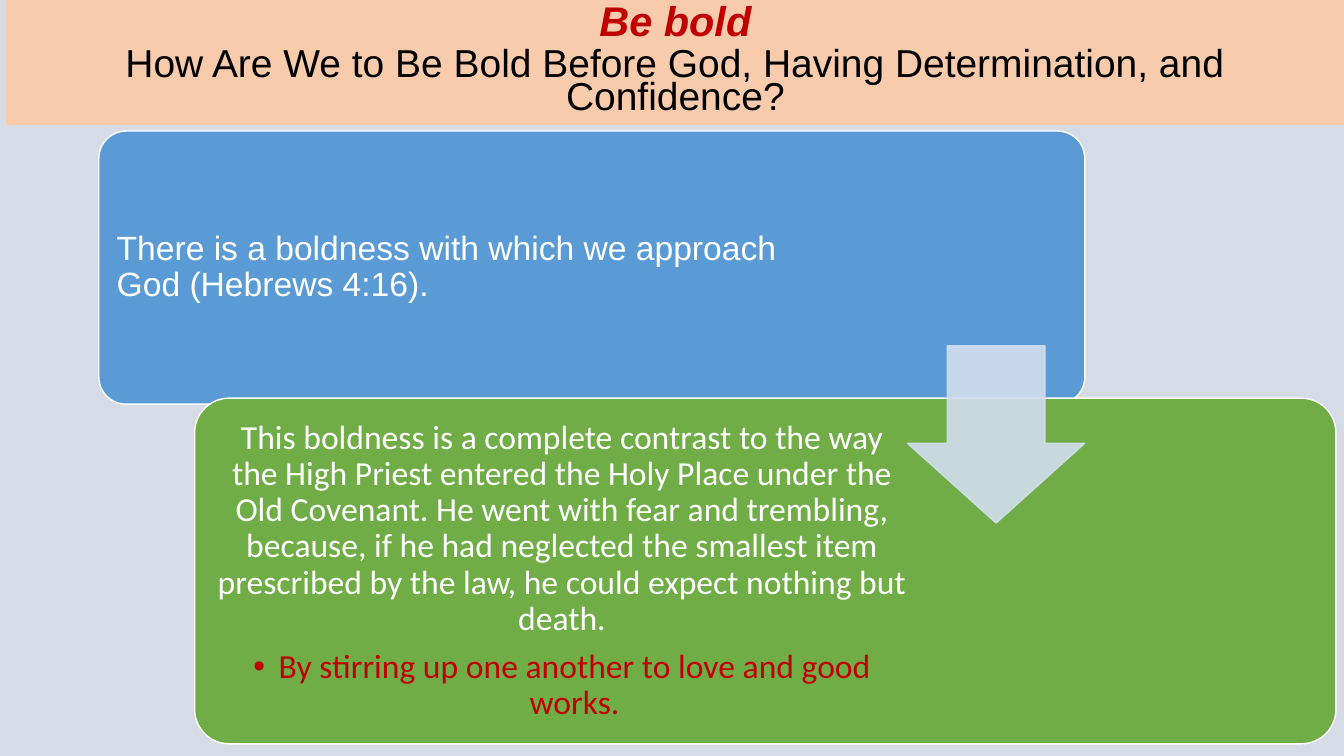
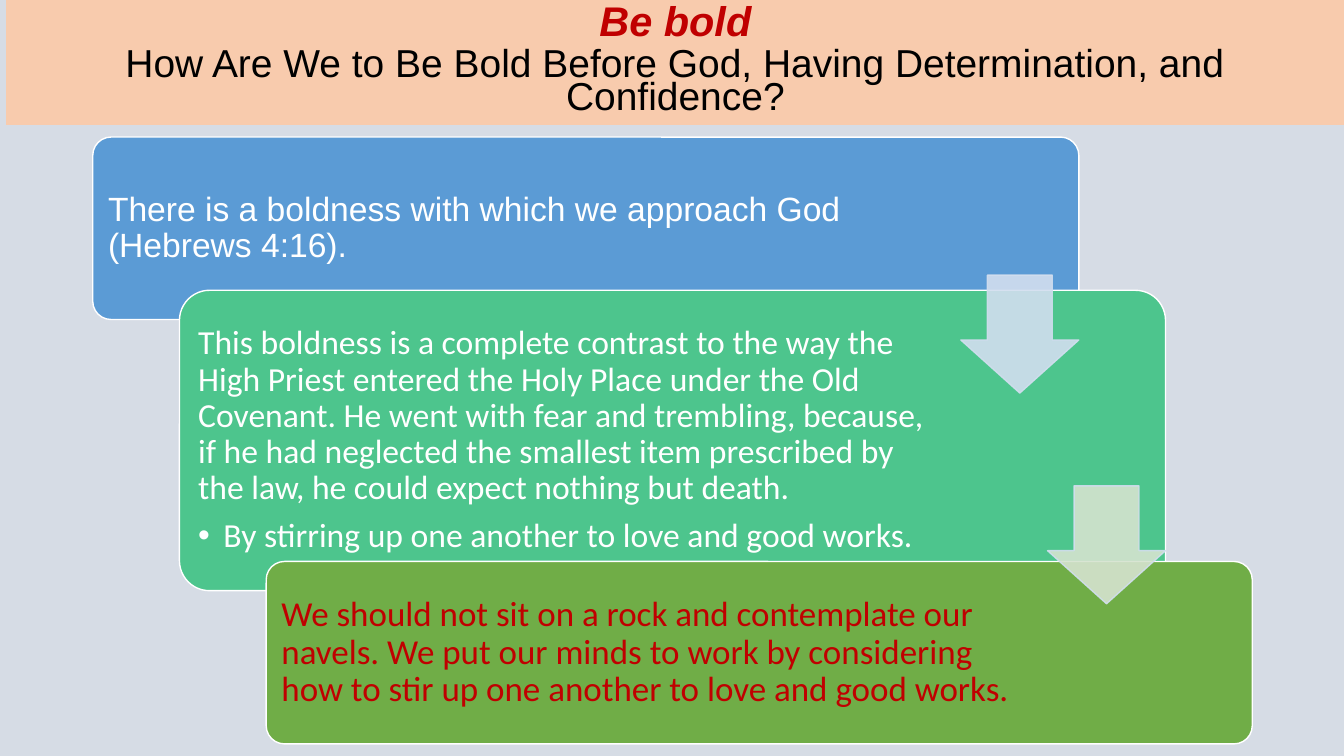
"""Build two slides of stepped cards on boldness before God."""
from dataclasses import dataclass

from lxml.etree import SubElement
from pptx import Presentation
from pptx.dml.color import RGBColor
from pptx.enum.shapes import MSO_SHAPE
from pptx.enum.text import MSO_ANCHOR, MSO_AUTO_SIZE, PP_ALIGN
from pptx.oxml.ns import qn
from pptx.util import Inches, Pt


@dataclass(frozen=True)
class Theme:
    """Colours, fonts and type sizes of the deck."""
    back: str = "D6DCE5"
    band: str = "F8CBAD"
    blue: str = "5B9BD5"
    mint: str = "4DC58D"
    green: str = "70AD47"
    ice: str = "D2DEEF"
    sage: str = "D5E3CF"
    red: str = "C00000"
    black: str = "000000"
    white: str = "FFFFFF"
    sans: str = "Arial"
    body: str = "Calibri"
    head: float = 29.6
    sub: float = 27.8
    text: float = 24
    large: float = 25


@dataclass(frozen=True)
class Line:
    """One paragraph of a card."""
    text: str
    font: str
    size: float
    tint: str
    dot: bool = False


THEME = Theme()
OPEN = Line("There is a boldness with which we approach God (Hebrews 4:16).",
            THEME.sans, THEME.text, THEME.white)
PRIEST = Line("This boldness is a complete contrast to the way the High Priest "
              "entered the Holy Place under the Old Covenant. He went with fear "
              "and trembling, because, if he had neglected the smallest item "
              "prescribed by the law, he could expect nothing but death.",
              THEME.body, THEME.text, THEME.white)
STIR = "By stirring up one another to love and good works."
ROCK = Line("We should not sit on a rock and contemplate our navels. We put our "
            "minds to work by considering how to stir up one another to love "
            "and good works.", THEME.body, THEME.large, THEME.red)


def paint(fill, tint):
    """Give a fill one solid colour."""
    fill.solid()
    fill.fore_color.rgb = RGBColor.from_string(tint)


def place(shape, left, top, width, height):
    """Set the position and size of a shape in inches."""
    shape.left, shape.top = Inches(left), Inches(top)
    shape.width, shape.height = Inches(width), Inches(height)


def add_run(para, text, font, size, tint, strong=False):
    """Add a formatted run to a paragraph."""
    run = para.add_run()
    run.text = text
    run.font.name, run.font.size = font, Pt(size)
    run.font.bold = run.font.italic = strong
    run.font.color.rgb = RGBColor.from_string(tint)


def set_para(para, align, lead, after):
    """Set the alignment and spacing of a paragraph."""
    para.alignment, para.line_spacing = align, lead
    para.space_before, para.space_after = Pt(0), Pt(after)


def add_dot(para):
    """Give a paragraph a hanging bullet."""
    props = para._p.get_or_add_pPr()
    props.set("marL", str(Inches(0.25)))
    props.set("indent", str(Inches(-0.25)))
    SubElement(props, qn("a:buFont")).set("typeface", "Arial")
    SubElement(props, qn("a:buChar")).set("char", "•")


def get_para(frame, index):
    """Return the first paragraph of a frame, or a new one."""
    return frame.add_paragraph() if index else frame.paragraphs[0]


def add_slide(deck):
    """Add a slide with the shared title band."""
    slide = deck.slides.add_slide(deck.slide_layouts[5])
    title = slide.shapes.title
    place(title, 0.06, 0, 13.28, 1.24)
    paint(title.fill, THEME.band)
    frame = title.text_frame
    frame.auto_size, frame.word_wrap = MSO_AUTO_SIZE.NONE, True
    frame.vertical_anchor = MSO_ANCHOR.MIDDLE
    rows = (("Be bold", THEME.head, THEME.red, True),
            ("How Are We to Be Bold Before God, Having Determination, and "
             "Confidence?", THEME.sub, THEME.black, False))
    for index, (text, size, tint, strong) in enumerate(rows):
        para = get_para(frame, index)
        set_para(para, PP_ALIGN.CENTER, 0.7, 6)
        add_run(para, text, THEME.sans, size, tint, strong)
    return slide


def add_form(slide, kind, box, tint, edge, ratios):
    """Add a filled and outlined preset shape."""
    left, top, width, height = map(Inches, box)
    shape = slide.shapes.add_shape(kind, left, top, width, height)
    shape.shadow.inherit = False
    for index, ratio in enumerate(ratios):
        shape.adjustments[index] = ratio
    paint(shape.fill, tint)
    paint(shape.line.fill, edge)
    shape.line.width = Pt(1)
    return shape


def add_card(slide, box, room, tint, lines, align=PP_ALIGN.LEFT):
    """Add a rounded card whose text fills the given room at its left."""
    width, height = box[2:]
    bend, pad = 0.1, 0.1
    card = add_form(slide, MSO_SHAPE.ROUNDED_RECTANGLE, box, tint,
                    THEME.white, [bend])
    frame = card.text_frame
    frame.word_wrap, frame.vertical_anchor = True, MSO_ANCHOR.MIDDLE
    frame.margin_left = frame.margin_top = frame.margin_bottom = Inches(pad)
    inset = 0.29 * bend * height
    frame.margin_right = Inches(width - 2 * inset - room + pad)
    for index, line in enumerate(lines):
        para = get_para(frame, index)
        set_para(para, align, 0.9, line.size * (0.15 if line.dot else 0.35))
        if line.dot:
            add_dot(para)
        add_run(para, line.text, line.font, line.size, line.tint)


def add_arrow(slide, right, top, side, tint):
    """Add a translucent down arrow that ends at a right edge."""
    arrow = add_form(slide, MSO_SHAPE.DOWN_ARROW, (right - side, top, side, side),
                     tint, THEME.ice, [])
    arrow.adjustments[0], arrow.adjustments[1] = 0.45, 0.55
    for name, value in zip(("adj1", "adj2"), (55000, 45000)):
        guide = arrow._element.spPr.find(f".//{qn('a:gd')}[@name='{name}']")
        guide.set("fmla", f"val {value}")
    for colour in arrow._element.spPr.iter(qn("a:srgbClr")):
        SubElement(colour, qn("a:alpha")).set("val", "90000")


def add_pair(deck):
    """Add the slide with two cards."""
    slide = add_slide(deck)
    left, width = 0.98, 9.78
    stir = Line(STIR, THEME.body, THEME.text, THEME.red, True)
    add_card(slide, (left, 1.3, width, 2.71), 6.98, THEME.blue, [OPEN])
    add_card(slide, (1.93, 3.95, 11.32, 3.43), 7.09, THEME.green,
             [PRIEST, stir], PP_ALIGN.CENTER)
    add_arrow(slide, left + width, 3.43, 1.76, THEME.ice)


def add_steps(deck):
    """Add the slide with three stepped cards."""
    slide = add_slide(deck)
    left, step, width = 0.92, 0.86, 9.78
    stir = Line(STIR, THEME.body, THEME.text, THEME.white, True)
    cards = ((1.36, 1.81, 7.83, THEME.blue, [OPEN]),
             (2.88, 2.98, 7.56, THEME.mint, [PRIEST, stir]),
             (5.57, 1.81, 7.63, THEME.green, [ROCK]))
    for index, (top, height, room, tint, lines) in enumerate(cards):
        box = (left + index * step, top, width, height)
        add_card(slide, box, room, tint, lines)
    for index, (top, tint) in enumerate(((2.73, THEME.ice), (4.82, THEME.sage))):
        add_arrow(slide, left + index * step + width, top, 1.17, tint)


def main():
    """Build and save the deck."""
    deck = Presentation()
    deck.slide_width, deck.slide_height = Inches(13.33), Inches(7.5)
    paint(deck.slide_master.background.fill, THEME.back)
    add_pair(deck)
    add_steps(deck)
    deck.save("out.pptx")


if __name__ == "__main__":
    main()
